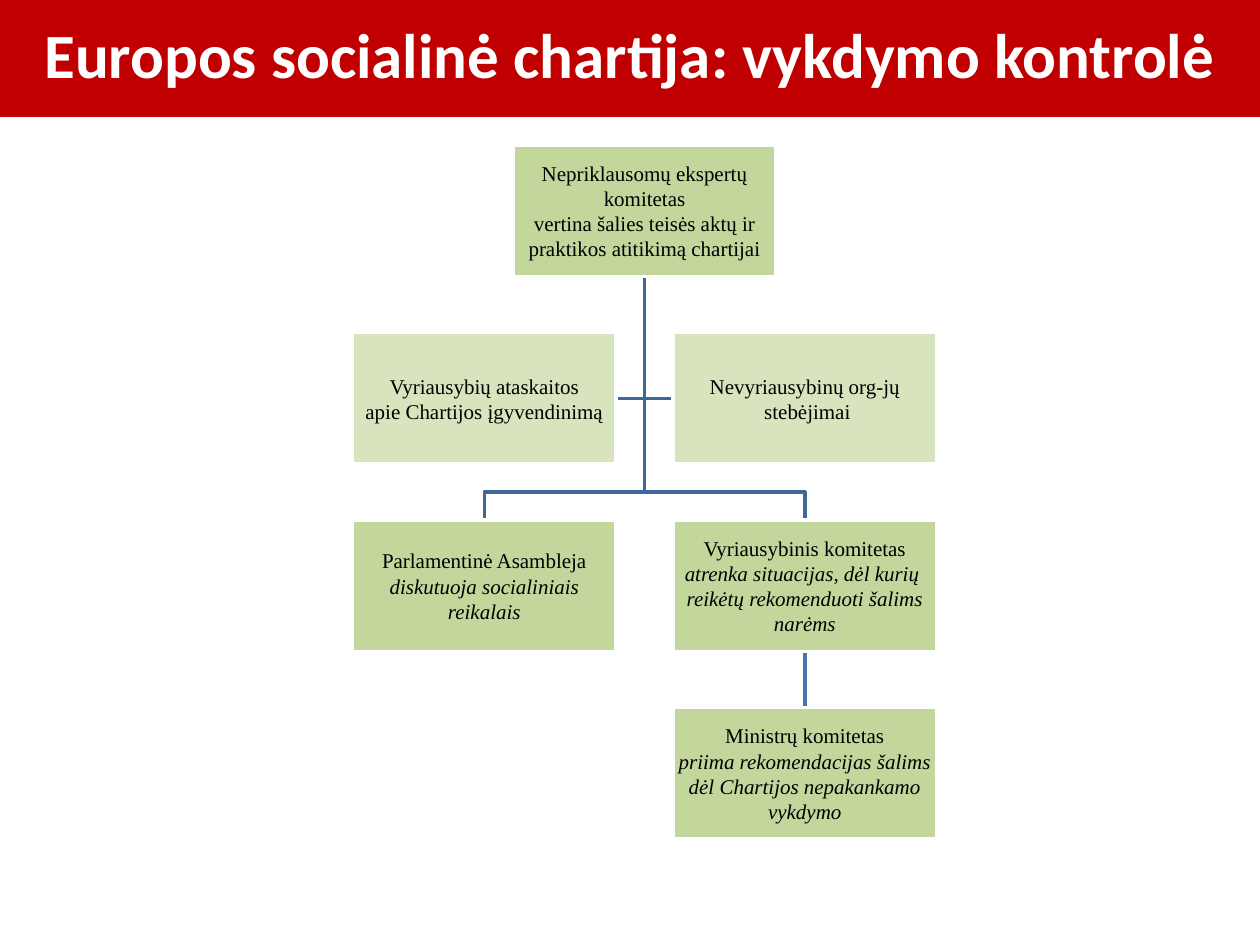
from lxml import etree
from pptx import Presentation
from pptx.dml.color import RGBColor
from pptx.enum.shapes import MSO_CONNECTOR, MSO_SHAPE
from pptx.enum.text import MSO_ANCHOR, PP_ALIGN
from pptx.oxml.ns import qn
from pptx.util import Cm, Pt

RECT = MSO_SHAPE.RECTANGLE
STRAIGHT = MSO_CONNECTOR.STRAIGHT
MIDDLE = MSO_ANCHOR.MIDDLE
CENTER = PP_ALIGN.CENTER

COLORS = {
    "banner": "C00000",
    "main": "C3D69B",
    "assistant": "D7E4BD",
    "branch": "3F6797",
    "link": "4875AC",
    "white": "FFFFFF",
    "black": "000000",
}
BOX_W, BOX_H = 5.31, 2.66
COLS = [7.11 + 3.23 * i for i in range(3)]
ROWS = [2.92 + 3.78 * i for i in range(4)]
TRUNK_X = COLS[1] + BOX_W / 2
TRUNK_Y = ROWS[0] + BOX_H
SIDE_Y = ROWS[1] + BOX_H / 2
BUS_Y = ROWS[2] - 0.56
LEFT_X = COLS[0] + BOX_W / 2
RIGHT_X = COLS[2] + BOX_W / 2


def rgb(name):
    return RGBColor.from_string(COLORS[name])


def add_box(x, y, w, h, fill, lines, font, size, color):
    sp = s.shapes.add_shape(RECT, Cm(x), Cm(y), Cm(w), Cm(h))
    sp.shadow.inherit = False
    sp.fill.solid()
    sp.fill.fore_color.rgb = rgb(fill)
    sp.line.fill.background()
    tf = sp.text_frame
    tf.word_wrap = True
    tf.vertical_anchor = MIDDLE
    tf.text = "\n".join(lines)
    for p in tf.paragraphs:
        p.alignment = CENTER
        for r in p.runs:
            r.font.name = font
            r.font.size = Pt(size)
            r.font.color.rgb = rgb(color)
    return sp


prs = Presentation()
prs.slide_width, prs.slide_height = Cm(25.4), Cm(19.05)
s = prs.slides.add_slide(prs.slide_layouts[6])

title = add_box(0, 0, 25.4, 2.36, "banner",
                ["Europos socialinė chartija: vykdymo kontrolė"],
                "Calibri", 36, "white")
p = title.text_frame.paragraphs[0]
p.line_spacing = 0.9
p.runs[0].font.bold = True

branches = [
    [(TRUNK_X, SIDE_Y), (COLS[2], SIDE_Y)],
    [(TRUNK_X, SIDE_Y), (COLS[0] + BOX_W, SIDE_Y)],
    [(TRUNK_X, BUS_Y), (RIGHT_X, BUS_Y), (RIGHT_X, ROWS[2])],
    [(TRUNK_X, BUS_Y), (LEFT_X, BUS_Y), (LEFT_X, ROWS[2])],
]
for points in branches:
    fb = s.shapes.build_freeform(Cm(TRUNK_X), Cm(TRUNK_Y))
    fb.add_line_segments([(Cm(x), Cm(y)) for x, y in points], close=False)
    sp = fb.convert_to_shape()
    sp.shadow.inherit = False
    sp.fill.background()
    sp.line.color.rgb = rgb("branch")
    sp.line.width = Pt(2)

link = s.shapes.add_connector(STRAIGHT, Cm(RIGHT_X), Cm(ROWS[2] + BOX_H),
                              Cm(RIGHT_X), Cm(ROWS[3]))
link.line.color.rgb = rgb("link")
link.line.width = Pt(2)
etree.SubElement(link._element.spPr, qn("a:effectLst"))

boxes = [
    (1, 0, "main", False, ["Nepriklausomų ekspertų komitetas",
                           "vertina šalies teisės aktų ir praktikos atitikimą chartijai"]),
    (0, 2, "main", True, ["Parlamentinė Asambleja",
                          "diskutuoja socialiniais reikalais"]),
    (2, 2, "main", True, ["Vyriausybinis komitetas",
                          "atrenka situacijas, dėl kurių ",
                          "reikėtų rekomenduoti šalims narėms"]),
    (2, 3, "main", True, ["Ministrų komitetas",
                          "priima rekomendacijas šalims",
                          "dėl Chartijos nepakankamo",
                          "vykdymo"]),
    (0, 1, "assistant", False, ["Vyriausybių ataskaitos",
                                "apie Chartijos įgyvendinimą"]),
    (2, 1, "assistant", False, ["Nevyriausybinų org-jų", " stebėjimai"]),
]
placed = {}
for col, row, fill, italic, lines in boxes:
    sp = add_box(COLS[col], ROWS[row], BOX_W, BOX_H, fill, lines,
                 "Times New Roman", 12, "black")
    sp.line.color.rgb = rgb("white")
    sp.line.width = Pt(2)
    tf = sp.text_frame
    tf.margin_left = tf.margin_right = Cm(0.02)
    tf.margin_top = tf.margin_bottom = Cm(0.02)
    for p in tf.paragraphs[1:]:
        p.runs[0].font.italic = italic
    placed[col, row] = sp

link.begin_connect(placed[2, 2], 2)
link.end_connect(placed[2, 3], 0)

prs.save("out.pptx")
